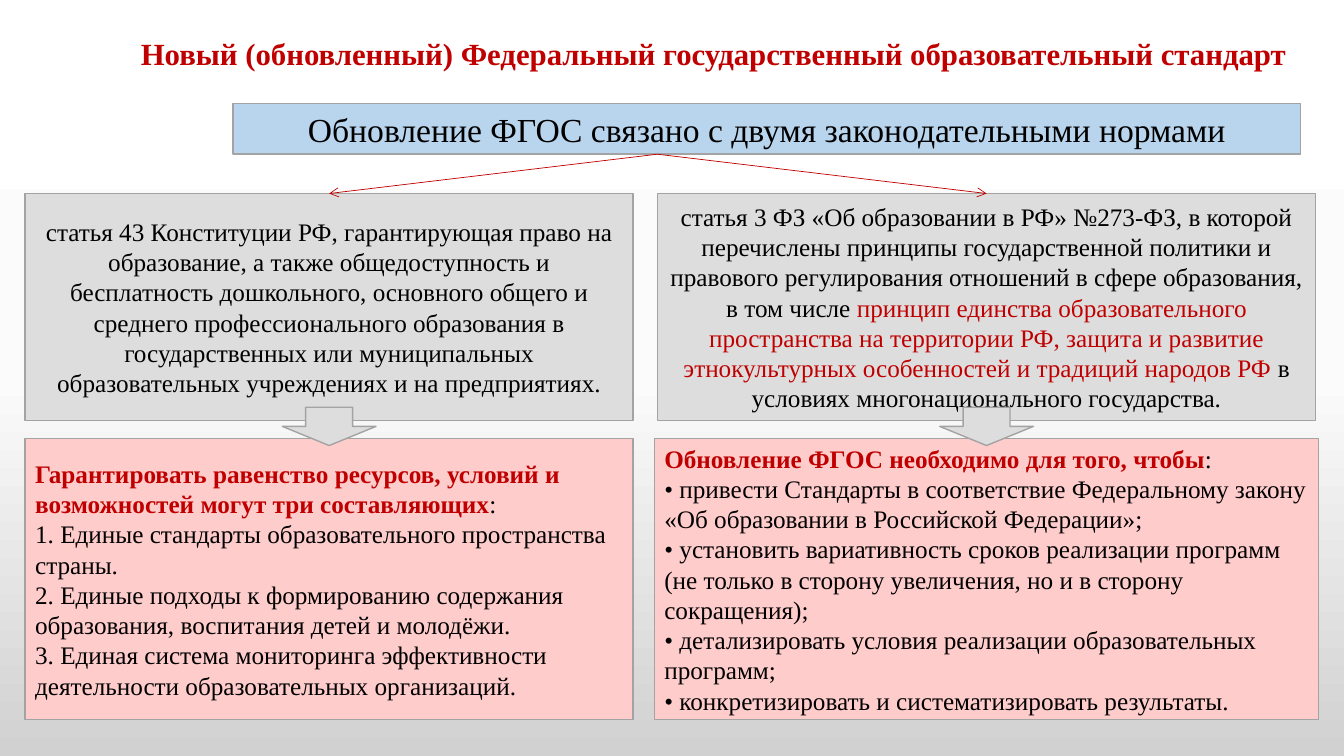
from copy import deepcopy

from lxml.etree import SubElement
from pptx import Presentation
from pptx.dml.color import RGBColor
from pptx.enum.dml import MSO_FILL
from pptx.enum.shapes import MSO_CONNECTOR, MSO_SHAPE
from pptx.enum.text import MSO_ANCHOR, PP_ALIGN
from pptx.oxml.ns import qn
from pptx.util import Inches, Pt

FONT = "Times New Roman"
COLORS = {
    "accent": "C00000", "text": "000000", "border": "A3A3A3",
    "banner": "B9D4ED", "norm": "DDDDDD", "outcome": "FFCCCC",
}
BACKDROP = ["FFFFFF", "FBFBFB", "D1D1D1"]

NORM_TOP, NORM_HEIGHT = 1.92, 2.25
OUTCOME_TOP, OUTCOME_HEIGHT = 4.35, 2.79
FORK = (6.52, 1.53)

TITLE = "Новый (обновленный) Федеральный государственный образовательный стандарт"
BANNER = "Обновление ФГОС связано с двумя законодательными нормами"
COLUMNS = [
    {
        "norm_span": (0.25, 6.03),
        "norm": [
            ("статья 43 Конституции РФ, гарантирующая право на образование, а также "
             "общедоступность и бесплатность дошкольного, основного общего и среднего "
             "профессионального образования в государственных или муниципальных "
             "образовательных учреждениях и на предприятиях.", "text"),
        ],
        "outcome_span": (0.25, 6.03),
        "heading": "Гарантировать равенство ресурсов, условий и возможностей могут три составляющих",
        "points": [
            "1. Единые стандарты образовательного пространства страны.",
            "2. Единые подходы к формированию содержания образования, воспитания детей и молодёжи.",
            "3. Единая система мониторинга эффективности деятельности образовательных организаций.",
        ],
    },
    {
        "norm_span": (6.52, 6.53),
        "norm": [
            ("статья 3 ФЗ «Об образовании в РФ» №273-ФЗ, в которой перечислены принципы "
             "государственной политики и правового регулирования отношений в сфере "
             "образования, в том числе ", "text"),
            ("принцип единства образовательного пространства на территории РФ, защита и "
             "развитие этнокультурных особенностей и традиций народов РФ", "accent"),
            (" в условиях многонационального государства.", "text"),
        ],
        "outcome_span": (6.49, 6.59),
        "heading": "Обновление ФГОС необходимо для того, чтобы",
        "points": [
            "• привести Стандарты в соответствие Федеральному закону "
            "«Об образовании в Российской Федерации»;",
            "• установить вариативность сроков реализации программ (не только в сторону "
            "увеличения, но и в сторону сокращения);",
            "• детализировать условия реализации образовательных программ;",
            "• конкретизировать и систематизировать результаты.",
        ],
    },
]


def rgb(name):
    """Return the named colour."""
    return RGBColor.from_string(COLORS[name])


def add_run(paragraph, text, size, color="text", bold=False):
    """Append one formatted run to a paragraph."""
    run = paragraph.add_run()
    run.text = text
    run.font.name = FONT
    run.font.size = Pt(size)
    run.font.bold = bold
    run.font.color.rgb = rgb(color)


def add_panel(slide, box, fill, kind=MSO_SHAPE.RECTANGLE):
    """Add a bordered flat shape in the given box."""
    panel = slide.shapes.add_shape(kind, *map(Inches, box))
    panel.shadow.inherit = False
    panel.fill.solid()
    panel.fill.fore_color.rgb = rgb(fill)
    panel.line.color.rgb = rgb("border")
    panel.line.width = Pt(1)
    panel.text_frame.word_wrap = True
    panel.text_frame.vertical_anchor = MSO_ANCHOR.MIDDLE
    return panel


def paint_background(slide):
    """Fill the slide with a vertical three-stop gradient."""
    fill = slide.background.fill
    fill.gradient()
    fill.gradient_angle = 270
    stops = slide.background._cSld.find(".//" + qn("a:gsLst"))
    stops.insert(1, deepcopy(stops[0]))
    for index, (stop, color) in enumerate(zip(fill.gradient_stops, BACKDROP)):
        stop.position = index / 2
        stop.color.rgb = RGBColor.from_string(color)


def add_title(slide, box):
    """Place and format the slide title."""
    title = slide.shapes.title
    title.left, title.top, title.width, title.height = map(Inches, box)
    title.text_frame.word_wrap = True
    title.text_frame.vertical_anchor = MSO_ANCHOR.MIDDLE
    heading = title.text_frame.paragraphs[0]
    heading.alignment = PP_ALIGN.CENTER
    add_run(heading, TITLE, 22, "accent", True)


def add_centered(slide, box, fill, runs, size):
    """Add a panel holding one centred paragraph."""
    panel = add_panel(slide, box, fill)
    paragraph = panel.text_frame.paragraphs[0]
    paragraph.alignment = PP_ALIGN.CENTER
    for text, color in runs:
        add_run(paragraph, text, size, color)
    return panel


def add_outcome(slide, box, heading, points):
    """Add a panel with a red heading and a list of points."""
    frame = add_panel(slide, box, "outcome").text_frame
    lead = frame.paragraphs[0]
    lead.alignment = PP_ALIGN.LEFT
    add_run(lead, heading, 18, "accent", True)
    add_run(lead, ":", 18)
    for point in points:
        paragraph = frame.add_paragraph()
        paragraph.alignment = PP_ALIGN.LEFT
        add_run(paragraph, point, 18)


def add_branch(slide, start, norm):
    """Draw a thin arrow from the fork to the top of a norm panel."""
    x, y = map(Inches, start)
    branch = slide.shapes.add_connector(MSO_CONNECTOR.STRAIGHT, x, y, norm.left, norm.top)
    branch.end_connect(norm, 0)
    branch.line.color.rgb = rgb("accent")
    branch.line.width = Pt(0.5)
    SubElement(branch.line._get_or_add_ln(), qn("a:tailEnd"), type="arrow")
    SubElement(branch._element.spPr, qn("a:effectLst"))


def add_column(slide, column):
    """Build a norm, its outcome and the arrows leading to them."""
    left, width = column["norm_span"]
    norm_box = (left, NORM_TOP, width, NORM_HEIGHT)
    norm = add_centered(slide, norm_box, "norm", column["norm"], 18)
    outcome_left, outcome_width = column["outcome_span"]
    outcome_box = (outcome_left, OUTCOME_TOP, outcome_width, OUTCOME_HEIGHT)
    add_outcome(slide, outcome_box, column["heading"], column["points"])
    add_branch(slide, FORK, norm)
    arrow_width, arrow_height = 0.93, 0.38
    arrow_box = (left + (width - arrow_width) / 2, 4.04, arrow_width, arrow_height)
    add_panel(slide, arrow_box, "norm", MSO_SHAPE.DOWN_ARROW)


def main():
    """Build and save the presentation."""
    deck = Presentation()
    deck.slide_width, deck.slide_height = Inches(13.33), Inches(7.5)
    slide = deck.slides.add_slide(deck.slide_layouts[5])
    paint_background(slide)
    add_title(slide, (1.1, 0.29, 11.95, 0.47))
    add_centered(slide, (2.31, 1.03, 10.59, 0.5), "banner", [(BANNER, "text")], 24)
    for column in COLUMNS:
        add_column(slide, column)
    deck.save("out.pptx")


if __name__ == "__main__":
    main()
